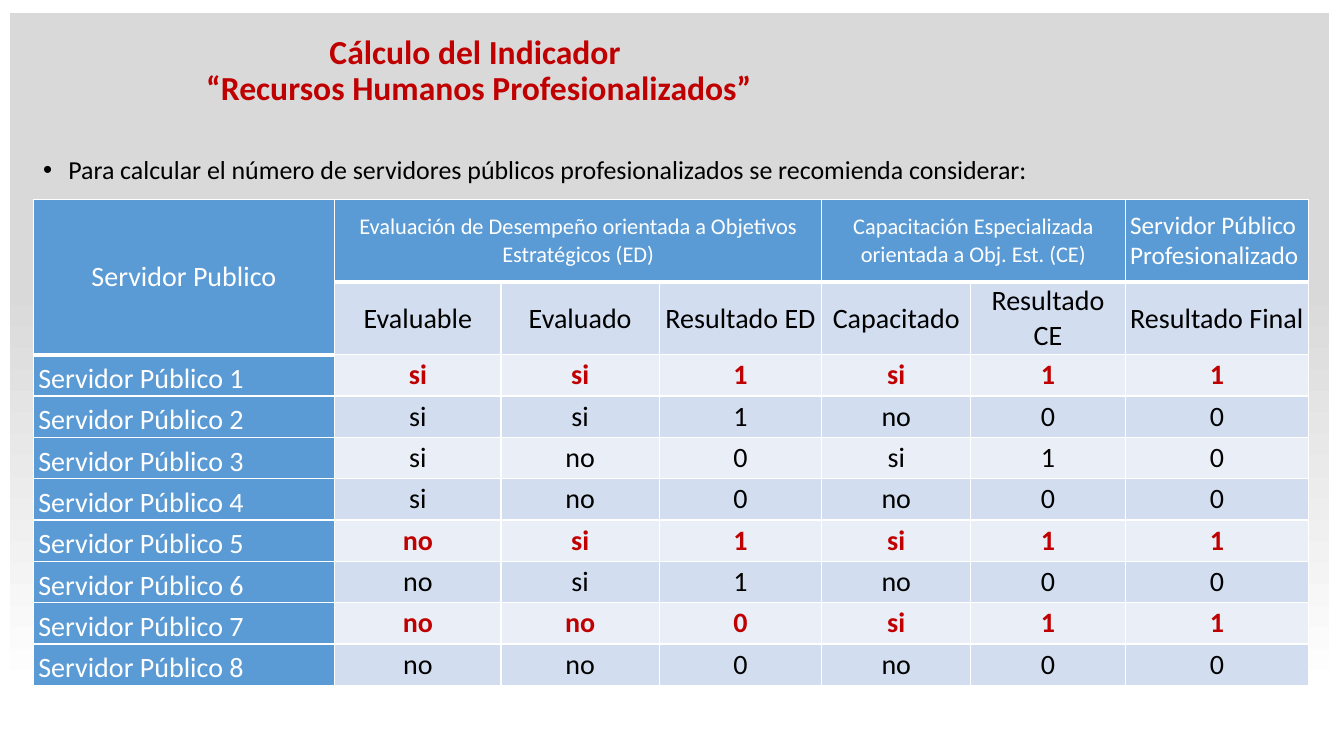
from dataclasses import dataclass

from lxml import etree
from pptx import Presentation
from pptx import util as u
from pptx.dml.color import RGBColor
from pptx.enum import shapes, text
from pptx.oxml import ns


@dataclass(frozen=True)
class Theme:
    font: str = "Calibri"
    accent: str = "C00000"
    ink: str = "000000"
    white: str = "FFFFFF"
    gray: str = "D9D9D9"
    header: str = "5B9BD5"
    band_dark: str = "D2DEEF"
    band_light: str = "EAEFF7"
    title_size: float = 24
    lead_size: float = 18.5
    body_size: float = 20
    final_size: float = 18
    group_size: float = 16


@dataclass(frozen=True)
class Box:
    left: float
    top: float
    width: float
    height: float

    def lengths(self) -> list:
        return [u.Inches(v) for v in (self.left, self.top, self.width, self.height)]


@dataclass(frozen=True)
class Group:
    label: str
    column: int
    row_span: int
    column_span: int
    size: float
    centered: bool = True


@dataclass(frozen=True)
class Servant:
    results: str
    highlighted: bool = False


THEME = Theme()
COLUMN_WIDTHS = (2.99, 1.65, 1.57, 1.61, 1.48, 1.53, 1.82)
ROW_HEIGHTS = (0.82, 0.72) + (0.41,) * 8
GROUPS = (
    Group("Servidor Publico", 0, 2, 1, THEME.body_size),
    Group("Evaluación de Desempeño orientada a Objetivos Estratégicos (ED)", 1, 1, 3, THEME.group_size),
    Group("Capacitación Especializada orientada a Obj. Est. (CE)", 4, 1, 2, THEME.group_size),
    Group("Servidor Público Profesionalizado", 6, 1, 1, THEME.final_size, centered=False),
)
MEASURES = ("Evaluable", "Evaluado", "Resultado ED", "Capacitado", "Resultado CE", "Resultado Final")
SERVANTS = (
    Servant("si si 1 si 1 1", True),
    Servant("si si 1 no 0 0"),
    Servant("si no 0 si 1 0"),
    Servant("si no 0 no 0 0"),
    Servant("no si 1 si 1 1", True),
    Servant("no si 1 no 0 0"),
    Servant("no no 0 si 1 1", True),
    Servant("no no 0 no 0 0"),
)


def format_runs(paragraph, size: float, color: str, bold: bool = False) -> None:
    for run in paragraph.runs:
        run.font.name = THEME.font
        run.font.size = u.Pt(size)
        run.font.bold = bold
        run.font.color.rgb = RGBColor.from_string(color)


def add_element(parent, tag: str, **attributes: str):
    return etree.SubElement(parent, ns.qn(tag), attributes)


def add_solid(parent, color: str) -> None:
    add_element(add_element(parent, "a:solidFill"), "a:srgbClr", val=color)


def add_backdrop(slide, box: Box) -> None:
    shape = slide.shapes.add_shape(shapes.MSO_SHAPE.RECTANGLE, *box.lengths())
    shape.shadow.inherit = False
    shape.line.fill.background()
    shape.fill.gradient()
    shape.fill.gradient_angle = 270
    stops = shape.element.spPr.find(ns.qn("a:gradFill")).find(ns.qn("a:gsLst"))
    stops.clear()
    for percent, color in ((0, THEME.gray), (37, THEME.gray), (93, THEME.white)):
        stop = add_element(stops, "a:gs", pos=str(percent * 1000))
        add_element(stop, "a:srgbClr", val=color)


def add_text(slide, box: Box, words: str, size: float, color: str, bold: bool = False):
    frame = slide.shapes.add_textbox(*box.lengths()).text_frame
    frame.word_wrap = True
    frame.text = words
    format_runs(frame.paragraphs[0], size, color, bold)
    return frame


def is_header(row: int, column: int) -> bool:
    return row == 0 or (row == 1 and column == 0)


def set_borders(cell, row: int, column: int) -> None:
    """Thin white rules, with a thick one under the header cells."""
    top = 3 if row > 0 and is_header(row - 1, column) else 1
    bottom = 3 if is_header(row, column) else 1
    properties = cell._tc.get_or_add_tcPr()
    for side, width in (("L", 1), ("R", 1), ("T", top), ("B", bottom)):
        add_solid(add_element(properties, f"a:ln{side}", w=str(u.Pt(width))), THEME.white)


def write_cell(cell, words: str, size: float, color: str, bold: bool = False, centered: bool = True) -> None:
    cell.text = words
    paragraph = cell.text_frame.paragraphs[0]
    paragraph.alignment = text.PP_ALIGN.CENTER if centered else text.PP_ALIGN.LEFT
    format_runs(paragraph, size, color, bold)


def add_servants_table(slide, box: Box) -> None:
    table = slide.shapes.add_table(len(ROW_HEIGHTS), len(COLUMN_WIDTHS), *box.lengths()).table
    table.first_row = table.horz_banding = False
    for column, width in zip(table.columns, COLUMN_WIDTHS):
        column.width = u.Inches(width)
    for row, height in zip(table.rows, ROW_HEIGHTS):
        row.height = u.Inches(height)

    # Borders, fills and margins of the grid
    for row in range(len(ROW_HEIGHTS)):
        for column in range(len(COLUMN_WIDTHS)):
            cell = table.cell(row, column)
            set_borders(cell, row, column)
            band = THEME.band_dark if row % 2 else THEME.band_light
            fill = THEME.header if row == 0 or column == 0 else band
            cell.fill.solid()
            cell.fill.fore_color.rgb = RGBColor.from_string(fill)
            cell.margin_left = cell.margin_right = u.Inches(0.05)
            cell.margin_top = cell.margin_bottom = 0
            cell.vertical_anchor = text.MSO_ANCHOR.MIDDLE

    # Two header rows
    for group in GROUPS:
        cell = table.cell(0, group.column)
        if group.row_span * group.column_span > 1:
            cell.merge(table.cell(group.row_span - 1, group.column + group.column_span - 1))
        write_cell(cell, group.label, group.size, THEME.white, centered=group.centered)
    for column, measure in enumerate(MEASURES, 1):
        write_cell(table.cell(1, column), measure, THEME.body_size, THEME.ink)

    # One row per public servant
    for number, servant in enumerate(SERVANTS, 1):
        name_cell = table.cell(number + 1, 0)
        write_cell(name_cell, f"Servidor Público {number}", THEME.body_size, THEME.white, centered=False)
        name_cell.vertical_anchor = text.MSO_ANCHOR.BOTTOM
        color = THEME.accent if servant.highlighted else THEME.ink
        for column, result in enumerate(servant.results.split(), 1):
            write_cell(table.cell(number + 1, column), result, THEME.body_size, color, servant.highlighted)


def main() -> None:
    presentation = Presentation()
    presentation.slide_width = u.Inches(13.33)
    presentation.slide_height = u.Inches(7.5)
    slide = presentation.slides.add_slide(presentation.slide_layouts[6])

    add_backdrop(slide, Box(0.1, 0.13, 13.08, 7.24))

    # Bulleted lead-in
    lead = add_text(
        slide, Box(0.33, 1.47, 12.64, 0.42),
        "Para calcular el número de servidores públicos profesionalizados se recomienda considerar:",
        THEME.lead_size, THEME.ink,
    )
    lead.vertical_anchor = text.MSO_ANCHOR.MIDDLE
    properties = lead.paragraphs[0]._p.get_or_add_pPr()
    properties.set("marL", str(u.Inches(0.25)))
    properties.set("indent", str(u.Inches(-0.25)))
    add_element(properties, "a:buFont", typeface="Arial")
    add_element(properties, "a:buChar", char="•")

    add_servants_table(slide, Box(0.33, 1.98, 12.64, 4.81))

    # Title
    title = add_text(
        slide, Box(0.92, 0.3, 7.66, 0.98),
        "Cálculo del Indicador \v“Recursos Humanos Profesionalizados”",
        THEME.title_size, THEME.accent, bold=True,
    )
    title.paragraphs[0].alignment = text.PP_ALIGN.CENTER
    title.paragraphs[0].line_spacing = 0.9

    presentation.save("out.pptx")


if __name__ == "__main__":
    main()
